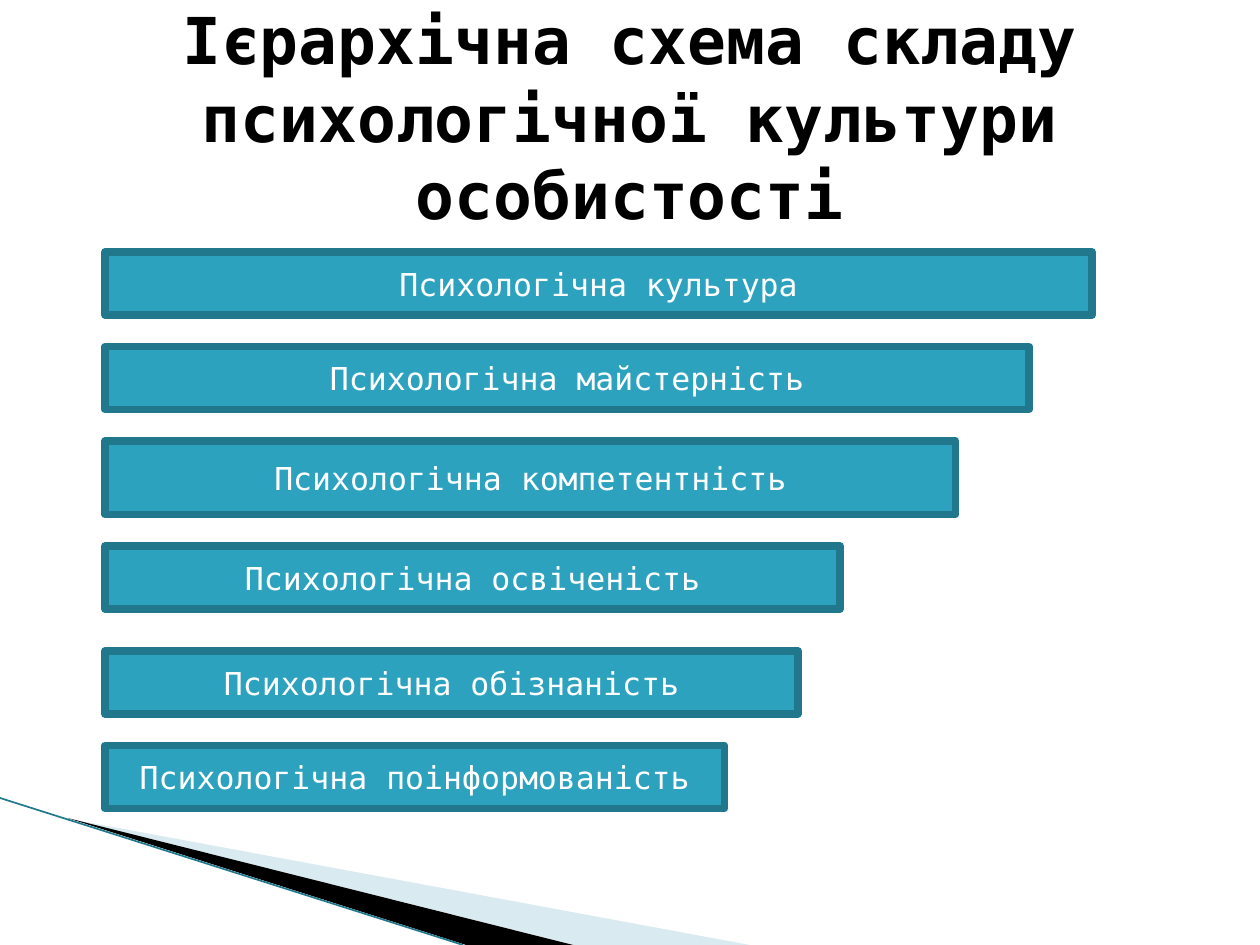
import pptx
import pptx.util
import pptx.dml.color
import pptx.enum.shapes
import pptx.enum.text
import pptx.oxml.ns
from lxml import etree

PX = 7620
FONT = "DejaVu Sans Mono"
TITLE = "Ієрархічна схема складу психологічної культури особистості"
BARS = [
    ("Психологічна культура", 0, 940, 60),
    ("Психологічна майстерність", 90, 880, 60),
    ("Психологічна компетентність", 180, 810, 70),
    ("Психологічна освіченість", 280, 700, 60),
    ("Психологічна обізнаність", 380, 660, 60),
    ("Психологічна поінформованість", 470, 590, 60),
]


def px(*values):
    """Turn px lengths into EMU."""
    return [v * PX for v in values]


def paint(fmt, color):
    """Give a fill a solid colour."""
    fmt.solid()
    fmt.fore_color.rgb = pptx.dml.color.RGBColor.from_string(color)


def write(tf, text, size, color, bold=False):
    """Put one centred paragraph in the middle of a text frame."""
    tf.text = text
    tf.word_wrap = True
    tf.auto_size = pptx.enum.text.MSO_AUTO_SIZE.NONE
    tf.vertical_anchor = pptx.enum.text.MSO_ANCHOR.MIDDLE
    p = tf.paragraphs[0]
    p.alignment = pptx.enum.text.PP_ALIGN.CENTER
    p.font.name = FONT
    p.font.size = pptx.util.Pt(size)
    p.font.bold = bold
    paint(p.font.fill, color)


def add_title(s, x, y, w, h):
    """Place the title placeholder."""
    sp = s.shapes.title
    sp.left, sp.top, sp.width, sp.height = px(x, y, w, h)
    write(sp.text_frame, TITLE, 36.9, "000000", True)


def add_wedge(s, points, color, alpha=100):
    """Draw a filled polygon without an outline."""
    builder = s.shapes.build_freeform(*points[0], scale=PX)
    builder.add_line_segments(points[1:], close=True)
    sp = builder.convert_to_shape()
    sp.shadow.inherit = False
    sp.line.fill.background()
    paint(sp.fill, color)
    if alpha < 100:
        clr = sp.fill._xPr.find(".//" + pptx.oxml.ns.qn("a:srgbClr"))
        etree.SubElement(clr, pptx.oxml.ns.qn("a:alpha"), val=str(alpha * 1000))


def add_corner(s, x, y):
    """Draw the corner wedges and the thin line beside them."""
    add_wedge(s, [(x + 66, y + 20), (x + 714, y + 140), (x + 547, y + 140)], "A0CBDC", 40)
    add_wedge(s, [(x + 64, y + 19), (x + 546, y + 140), (x + 444, y + 140)], "000000")
    line = s.shapes.add_connector(
        pptx.enum.shapes.MSO_CONNECTOR.STRAIGHT, *px(x, y, x + 441, y + 140))
    line.line.width = pptx.util.Pt(0.95)
    paint(line.line.fill, "21788D")
    etree.SubElement(line._element.spPr, pptx.oxml.ns.qn("a:effectLst"))


def add_bars(s, x, y):
    """Draw the stepped bars from the lowest level to the highest."""
    for text, top, w, h in reversed(BARS):
        sp = s.shapes.add_shape(
            pptx.enum.shapes.MSO_SHAPE.RECTANGLE, *px(x, y + top, w, h))
        sp.shadow.inherit = False
        paint(sp.fill, "2DA2BF")
        paint(sp.line.fill, "21788D")
        sp.line.width = pptx.util.Pt(4.33)
        write(sp.text_frame, text, 18, "FFFFFF")


def main():
    """Build and save the slide."""
    prs = pptx.Presentation()
    prs.slide_width, prs.slide_height = px(1200, 900)
    s = prs.slides.add_slide(prs.slide_layouts[5])
    add_corner(s, 0, 760)
    add_title(s, 0, 36, 1200, 150)
    add_bars(s, 100, 240)
    prs.save("out.pptx")


if __name__ == "__main__":
    main()
